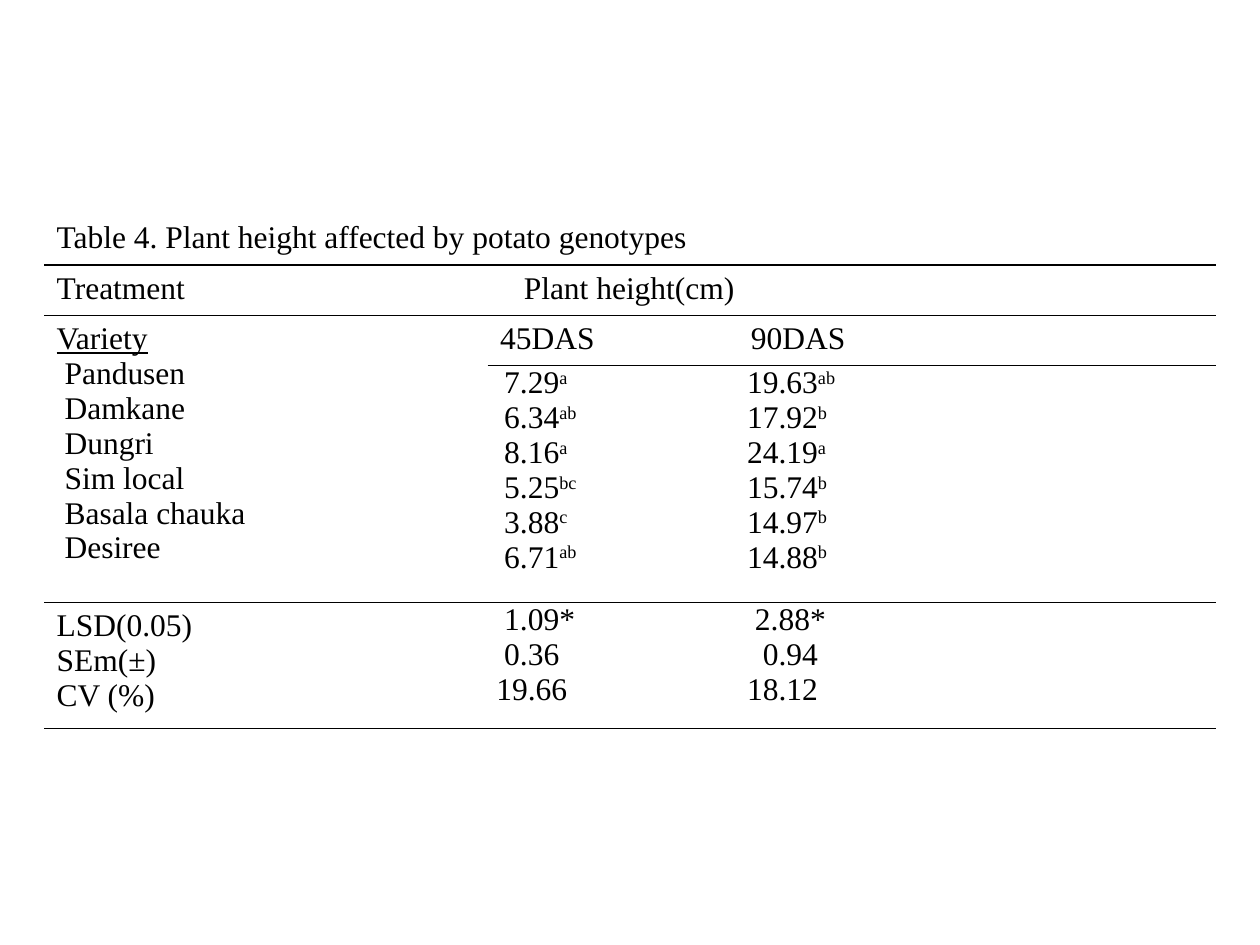
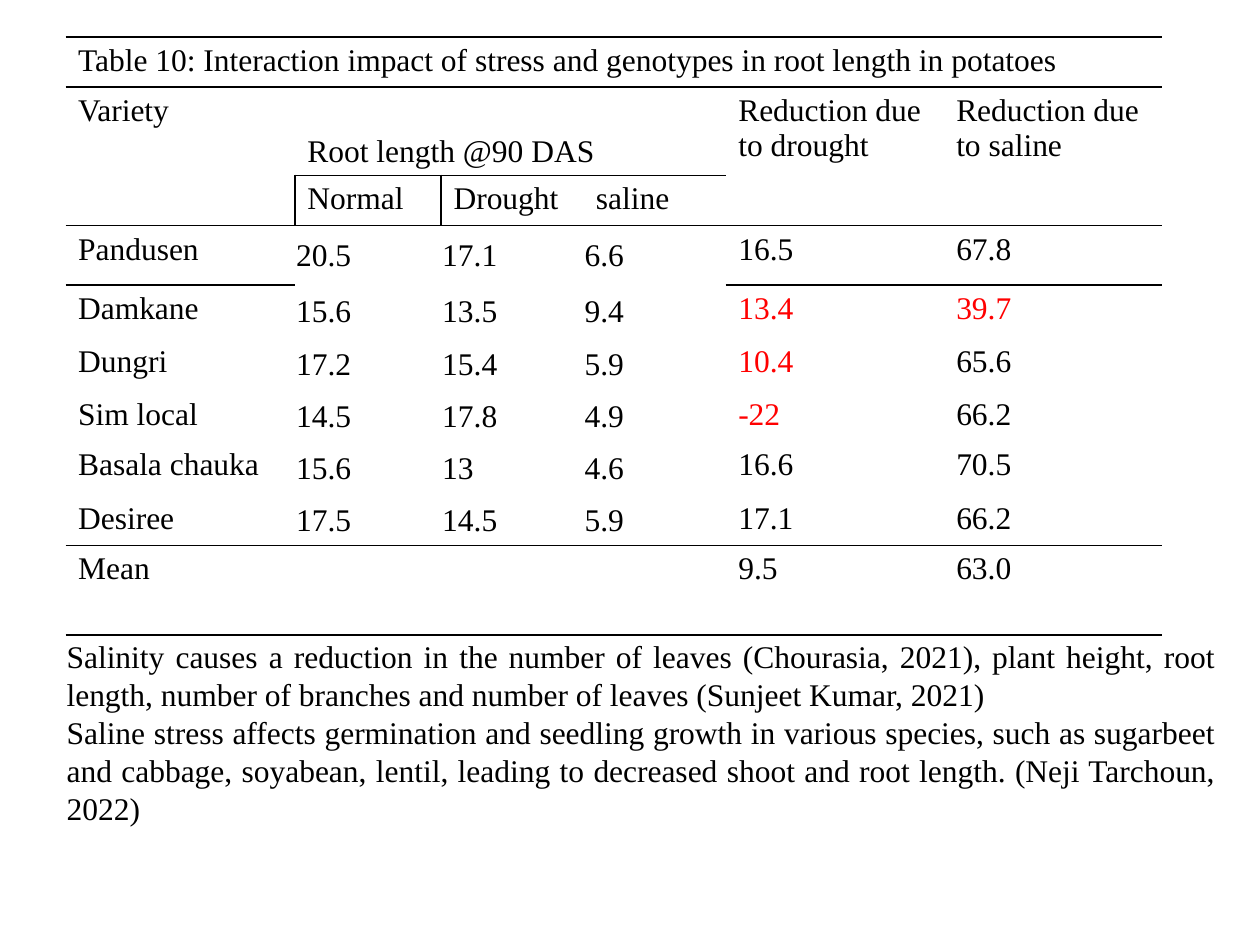
import itertools
from dataclasses import dataclass

import pptx
import pptx.util
import pptx.dml.color
import pptx.enum.text
from lxml import etree
from pptx.oxml.ns import qn

Pt, Inches = pptx.util.Pt, pptx.util.Inches
RGB = pptx.dml.color.RGBColor.from_string
ALIGN, ANCHOR = pptx.enum.text.PP_ALIGN, pptx.enum.text.MSO_ANCHOR


@dataclass(frozen=True)
class Theme:
    font: str = "Times New Roman"
    size: int = 18
    ink: str = "000000"
    alert: str = "FF0000"
    rule: int = 1
    space: float = 4.5
    plain: str = "{2D5ABB26-0587-4C30-8999-92F81FD0307C}"


THEME = Theme()
WIDE, HIGH = Inches(10), Inches(7.5)
TIGHT = (0.07, 0, 0.07, 0)
SNUG = (0.01, 0.01, 0.01, 0)


def place(box):
    """Turn shares of the slide into lengths."""
    return [round(part * side) for part, side in zip(box, (WIDE, HIGH, WIDE, HIGH))]


def write(owner, text, color=THEME.ink, align=None, anchor=None, inset=None,
          indent=(), under=()):
    """Fill a cell or box; "^" raises the rest of a line, indent counts spaces."""
    frame = owner.text_frame
    if anchor is not None:
        owner.vertical_anchor = anchor
    if inset:
        (owner.margin_left, owner.margin_top,
         owner.margin_right, owner.margin_bottom) = map(Inches, inset)
    lines = text.split("\n")
    for at, (line, step) in enumerate(itertools.zip_longest(lines, indent, fillvalue=0)):
        para = frame.paragraphs[0] if at == 0 else frame.add_paragraph()
        para.alignment = align
        if step:
            para._p.get_or_add_pPr().set("marL", str(Pt(step * THEME.space)))
        for raised, part in enumerate(line.split("^")):
            run = para.add_run()
            run.text = part
            font = run.font
            font.name, font.size = THEME.font, Pt(THEME.size)
            font.color.rgb = RGB(color)
            if at in under:
                font.underline = True
            if raised:
                font._element.set("baseline", "30000")


def grid(slide, box, cols, rows):
    """Add a plain table whose columns and rows share out the box."""
    left, top, width, height = place(box)
    table = slide.shapes.add_table(len(rows), len(cols), left, top, width, height).table
    table.first_row = table.horz_banding = False
    table._tbl.tblPr.find(qn("a:tableStyleId")).text = THEME.plain
    for col, share in zip(table.columns, cols):
        col.width = round(width * share / sum(cols))
    for row, share in zip(table.rows, rows):
        row.height = round(height * share / sum(rows))
    for cell in table.iter_cells():
        cell.fill.background()
    return table


def rule(table, row, cols, edge="T"):
    """Draw one edge of a run of cells; draw B before T and T before L."""
    for col in cols:
        props = table.cell(row, col)._tc.get_or_add_tcPr()
        line = etree.Element(qn(f"a:ln{edge}"), w=str(Pt(THEME.rule)))
        fill = etree.SubElement(line, qn("a:solidFill"))
        etree.SubElement(fill, qn("a:srgbClr"), val=THEME.ink)
        props.insert(0, line)


def merge(table, *spans):
    for top, left, bottom, right in spans:
        table.cell(top, left).merge(table.cell(bottom, right))


def height_table(slide, box):
    table = grid(slide, box, (3.52, 1.99, 3.79), (0.4, 0.4, 0.4, 1.88, 1))
    merge(table, (0, 0, 0, 2), (1, 1, 1, 2), (2, 0, 3, 0))
    write(table.cell(0, 0), "Table 4. Plant height affected by potato genotypes")
    write(table.cell(1, 0), "Treatment")
    write(table.cell(1, 1), "Plant height(cm)", indent=[3])
    write(table.cell(2, 0),
          "Variety\nPandusen\nDamkane\nDungri\nSim local\nBasala chauka\nDesiree",
          indent=[0] + [1] * 6, under=[0])
    write(table.cell(2, 1), "45DAS")
    write(table.cell(2, 2), "90DAS")
    write(table.cell(3, 1), "7.29^a\n6.34^ab\n8.16^a\n5.25^bc\n3.88^c\n6.71^ab",
          inset=TIGHT, indent=[1] * 6)
    write(table.cell(3, 2), "19.63^ab\n17.92^b\n24.19^a\n15.74^b\n14.97^b\n14.88^b",
          inset=TIGHT)
    write(table.cell(4, 0), "LSD(0.05)\nSEm(±)\nCV (%)")
    write(table.cell(4, 1), "1.09*\n0.36\n19.66", inset=TIGHT, indent=[1, 1, 0])
    write(table.cell(4, 2), "2.88*\n0.94\n18.12", inset=TIGHT, indent=[1, 2, 0])
    rule(table, 4, range(3), "B")
    for row in (1, 2, 4):
        rule(table, row, range(3))
    rule(table, 3, (1, 2))


ROOTS = (
    ("Pandusen", "20.5", "17.1", "6.6", "16.5", "67.8"),
    ("Damkane", "15.6", "13.5", "9.4", "13.4", "39.7"),
    ("Dungri", "17.2", "15.4", "5.9", "10.4", "65.6"),
    ("Sim local", "14.5", "17.8", "4.9", "-22", "66.2"),
    ("Basala chauka", "15.6", "13", "4.6", "16.6", "70.5"),
    ("Desiree", "17.5", "14.5", "5.9", "17.1", "66.2"),
    ("Mean", "", "", "", "9.5", "63.0"),
)
ALERTS = {"13.4", "39.7", "10.4", "-22"}


def root_table(slide, box):
    table = grid(slide, box, (1.82, 1.16, 1.13, 1.13, 1.73, 1.73),
                 (0.4, 0.7, 0.4, 0.47, 0.42, 0.42, 0.4, 0.43, 0.4, 0.71))
    merge(table, (0, 0, 0, 5), (1, 0, 2, 0), (1, 1, 1, 3), (1, 4, 2, 4), (1, 5, 2, 5))
    write(table.cell(0, 0),
          "Table 10: Interaction impact of stress and genotypes in root length in potatoes")
    write(table.cell(1, 0), "Variety")
    write(table.cell(1, 1), "Root length @90 DAS", anchor=ANCHOR.BOTTOM)
    for col, cause in enumerate(("drought", "saline"), 4):
        write(table.cell(1, col), f"Reduction due to {cause}")
    for col, stress in enumerate(("Normal", "Drought", "saline"), 1):
        write(table.cell(2, col), stress)
    for row, line in enumerate(ROOTS, 3):
        for col, text in enumerate(line):
            if not text:
                continue
            look = {"align": ALIGN.JUSTIFY} if col else {}
            if 1 <= col <= 3:
                look.update(anchor=ANCHOR.MIDDLE, inset=SNUG)
            if col > 3 and text in ALERTS:
                look["color"] = THEME.alert
            write(table.cell(row, col), text, **look)
    rule(table, 9, range(6), "B")
    for row in (0, 1, 9):
        rule(table, row, range(6))
    rule(table, 2, (1, 2, 3))
    rule(table, 3, (0, 4, 5))
    rule(table, 2, [1], "L")


def notes(slide, box):
    area = slide.shapes.add_textbox(*place(box))
    area.text_frame.word_wrap = True
    write(area,
          "Salinity causes a reduction in the number of leaves (Chourasia, 2021), plant "
          "height, root length, number of branches and number of leaves (Sunjeet Kumar, "
          "2021)\n"
          "Saline stress affects germination and seedling growth in various species, such "
          "as sugarbeet and cabbage, soyabean, lentil, leading to decreased shoot and root "
          "length. (Neji Tarchoun, 2022)", align=ALIGN.JUSTIFY)


def main():
    deck = pptx.Presentation()
    deck.slide_width, deck.slide_height = WIDE, HIGH
    blank = deck.slide_layouts[6]
    height_table(deck.slides.add_slide(blank), (0.035, 0.227, 0.93, 0.544))
    roots = deck.slides.add_slide(blank)
    root_table(roots, (0.052, 0.039, 0.87, 0.633))
    notes(roots, (0.043, 0.668, 0.932, 0.216))
    deck.save("out.pptx")


if __name__ == "__main__":
    main()
